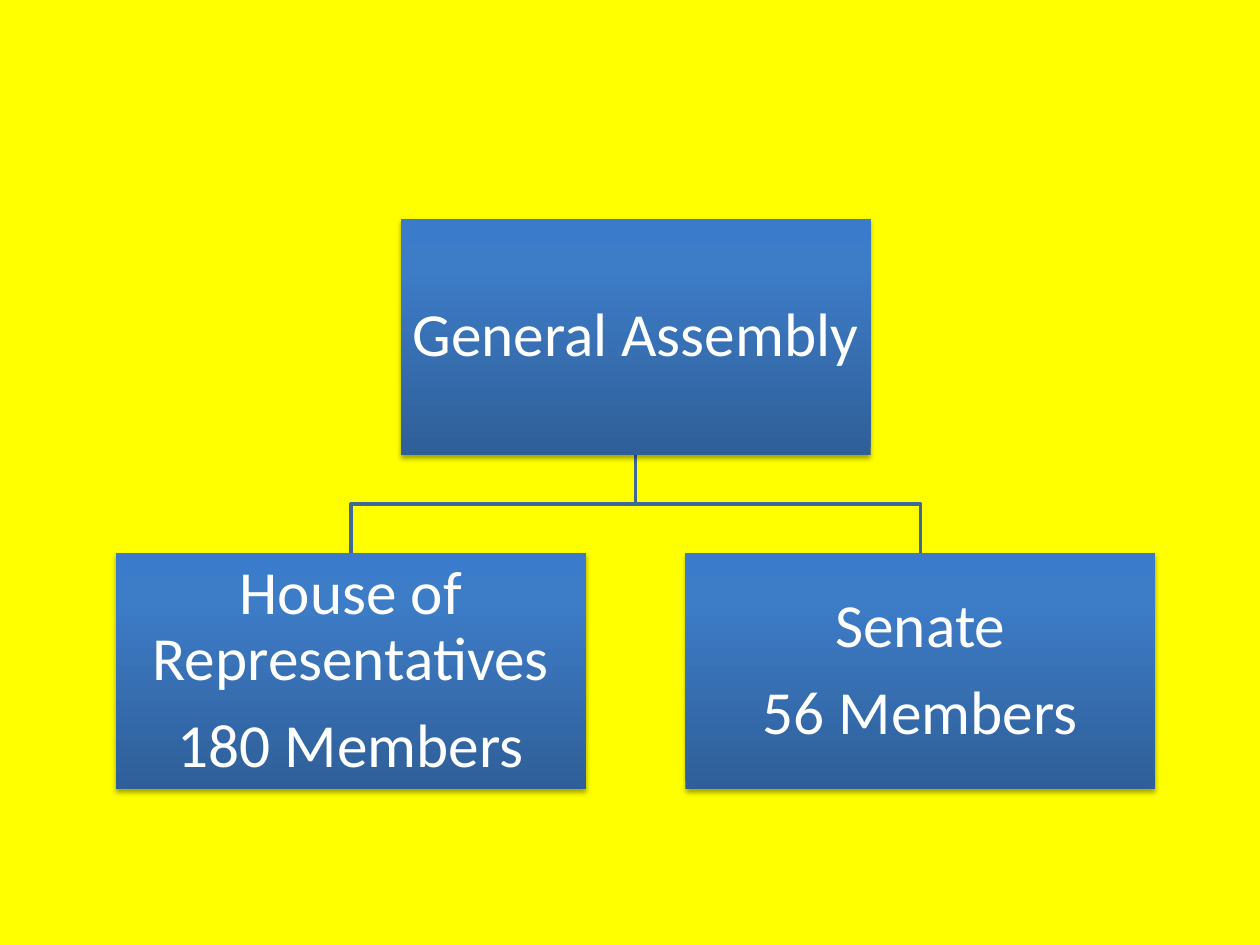
"""Build an organisation chart of the General Assembly and its two chambers."""
from copy import deepcopy
from dataclasses import dataclass

from lxml import etree
from pptx import Presentation
from pptx.dml.color import RGBColor
from pptx.enum import shapes, text
from pptx.oxml import ns
from pptx.util import Inches, Pt


@dataclass
class Theme:
    background: str = "FFFF00"
    line: str = "3F6797"
    text: str = "FFFFFF"
    shadow: str = "000000"
    gradient: tuple = ((0, "2F5F99"), (0.8, "3D7CC7"), (1, "3A7CCB"))
    font: str = "Calibri"
    size: int = 35


def rgb(value):
    return RGBColor.from_string(value)


def add_shadow(s):
    s.shadow.inherit = False
    effects = s._element.spPr.find(ns.qn("a:effectLst"))
    outer = etree.SubElement(effects, ns.qn("a:outerShdw"), blurRad=str(Pt(3.1)),
                             dist=str(Pt(1.8)), dir="5400000", rotWithShape="0")
    color = etree.SubElement(outer, ns.qn("a:srgbClr"), val=theme.shadow)
    etree.SubElement(color, ns.qn("a:alpha"), val="35000")


theme = Theme()
box_w, box_h = 3.73, 1.87
root_x, root_y = 3.18, 1.74
child_y, child_offset = 4.39, 2.26
boxes = [
    (root_x, root_y, "General Assembly"),
    (root_x - child_offset, child_y, "House of Representatives\n180 Members"),
    (root_x + child_offset, child_y, "Senate\n56 Members"),
]

prs = Presentation()
prs.slide_width, prs.slide_height = Inches(10), Inches(7.5)
slide = prs.slides.add_slide(prs.slide_layouts[6])
slide.background.fill.solid()
slide.background.fill.fore_color.rgb = rgb(theme.background)

center_x, root_bottom = root_x + box_w / 2, root_y + box_h
middle_y = (root_bottom + child_y) / 2
for offset in (child_offset, -child_offset):
    child_x = center_x + offset
    builder = slide.shapes.build_freeform(Inches(center_x), Inches(root_bottom))
    branch = [(center_x, middle_y), (child_x, middle_y), (child_x, child_y)]
    builder.add_line_segments([(Inches(x), Inches(y)) for x, y in branch], close=False)
    s = builder.convert_to_shape()
    s.fill.background()
    s.line.color.rgb = rgb(theme.line)
    s.line.width = Pt(2)
    s.shadow.inherit = False

for x, y, label in boxes:
    s = slide.shapes.add_shape(shapes.MSO_SHAPE.RECTANGLE, Inches(x), Inches(y),
                               Inches(box_w), Inches(box_h))
    s.line.fill.background()
    s.fill.gradient()
    s.fill.gradient_angle = 90
    stop_list = s._element.spPr.find(ns.qn("a:gradFill")).find(ns.qn("a:gsLst"))
    stop_list.insert(1, deepcopy(stop_list[0]))
    for stop, (position, color) in zip(s.fill.gradient_stops, theme.gradient):
        stop.position = position
        stop.color.rgb = rgb(color)
    add_shadow(s)

    tf = s.text_frame
    tf.text = label
    tf.word_wrap = True
    tf.vertical_anchor = text.MSO_ANCHOR.MIDDLE
    tf.margin_left = tf.margin_right = tf.margin_top = tf.margin_bottom = Inches(0.02)
    for p in tf.paragraphs:
        p.alignment = text.PP_ALIGN.CENTER
        p.line_spacing = 0.9
        p.space_after = Pt(12)
        for r in p.runs:
            r.font.name = theme.font
            r.font.size = Pt(theme.size)
            r.font.color.rgb = rgb(theme.text)

prs.save("out.pptx")
